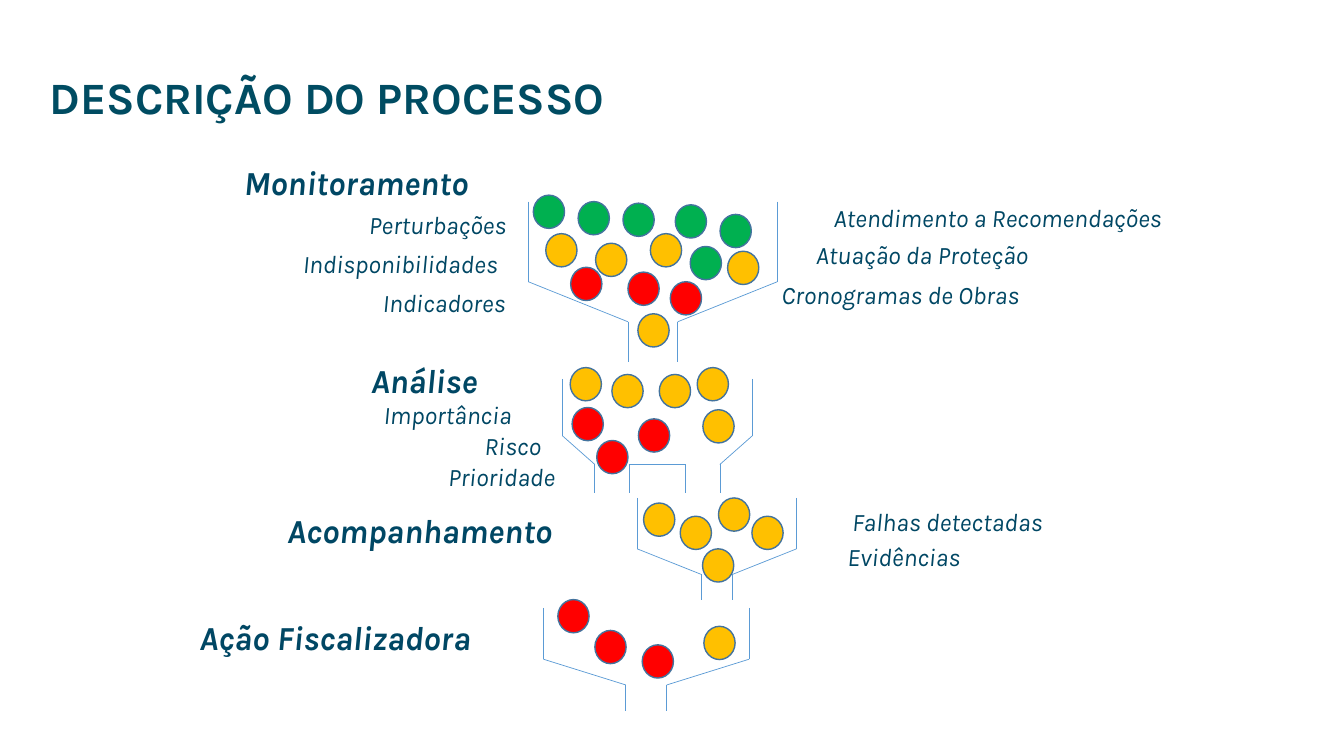
from pptx import Presentation
from pptx.dml.color import RGBColor
from pptx.enum.shapes import MSO_CONNECTOR, MSO_SHAPE
from pptx.enum.text import MSO_ANCHOR, PP_ALIGN
from pptx.oxml.ns import qn
from pptx.util import Inches, Pt
from lxml import etree

LINE, OVAL = MSO_CONNECTOR.STRAIGHT, MSO_SHAPE.OVAL
LEFT, CENTER, MIDDLE = PP_ALIGN.LEFT, PP_ALIGN.CENTER, MSO_ANCHOR.MIDDLE
FONT, TEAL, TITLE_TEAL = "Karla", "004764", "004C62"
FUNNEL_LINE, BALL_LINE = "5B9BD5", "43739E"
GREEN, AMBER, RED = "00B050", "FFC000", "FF0000"
BALL_W, BALL_H = 0.31, 0.33
# Heights of the funnel's shoulder and neck, as shares of its box
SHOULDER, NECK = 0.5, 0.75

# box: left, top, width, height in inches
# spouts: left and right edge of each spout, as shares of the box width
# balls: left and top as shares of the box
# heading, labels: text, then left and top from the box corner and width, in inches
STAGES = [
    {"box": (5.24, 2, 2.47, 1.59), "spouts": [(0.4, 0.6)],
     "balls": {
         GREEN: [(0.02, -0.04), (0.2, 0), (0.38, 0.01), (0.59, 0.02),
                 (0.77, 0.08), (0.65, 0.28)],
         AMBER: [(0.07, 0.2), (0.27, 0.26), (0.49, 0.2), (0.8, 0.31), (0.44, 0.7)],
         RED: [(0.17, 0.41), (0.4, 0.44), (0.57, 0.5)]},
     "heading": ("Monitoramento", -2.92, -0.44, 2.65),
     "labels": [("Perturbações", -1.78, 0.03, 1.76),
                ("Indisponibilidades", -2.49, 0.41, 2.44),
                ("Indicadores", -1.75, 0.8, 1.83),
                ("Atendimento a Recomendações", 2.44, -0.04, 4.43),
                ("Atuação da Proteção", 2.44, 0.33, 2.93),
                ("Cronogramas de Obras", 2.29, 0.72, 2.8)]},
    {"box": (5.58, 3.76, 1.88, 1.13), "spouts": [(0.17, 0.35), (0.65, 0.83)],
     "balls": {
         AMBER: [(0.04, -0.1), (0.26, -0.04), (0.51, -0.04), (0.71, -0.1), (0.74, 0.27)],
         RED: [(0.05, 0.25), (0.18, 0.54), (0.4, 0.35)]},
     "heading": ("Análise", -2, -0.24, 1.66),
     "labels": [("Importância", -2.09, 0.15, 1.9),
                ("Risco", -0.91, 0.46, 0.83),
                ("Prioridade", -1.3, 0.77, 1.39)]},
    {"box": (6.32, 4.94, 1.58, 1.01), "spouts": [(0.4, 0.6)],
     "balls": {AMBER: [(0.04, 0.05), (0.27, 0.18), (0.51, 0), (0.72, 0.18), (0.41, 0.5)]},
     "heading": ("Acompanhamento", -3.57, 0.07, 3.44),
     "labels": [("Falhas detectadas", 1.65, 0.03, 2.85),
                ("Evidências", 1.7, 0.38, 1.89)]},
    {"box": (5.39, 6.03, 2.04, 1.02), "spouts": [(0.4, 0.6)],
     "balls": {RED: [(0.07, -0.08), (0.25, 0.22), (0.48, 0.36)], AMBER: [(0.78, 0.18)]},
     "heading": ("Ação Fiscalizadora", -3.51, 0.04, 3.61),
     "labels": []},
]


def color(hex_string):
    return RGBColor.from_string(hex_string)


def add_run(p, text, size, hex_string, bold=False, italic=False):
    r = p.add_run()
    r.text = text
    r.font.name, r.font.size = FONT, Pt(size)
    r.font.bold, r.font.italic = bold, italic
    r.font.color.rgb = color(hex_string)


def add_title(s, text, x, y, w, h):
    sp = s.shapes.title
    sp.left, sp.top, sp.width, sp.height = map(Inches, (x, y, w, h))
    tf = sp.text_frame
    tf.word_wrap, tf.vertical_anchor = True, MIDDLE
    p = tf.paragraphs[0]
    p.alignment, p.line_spacing = LEFT, 0.9
    add_run(p, text, 32, TITLE_TEAL, bold=True)


def add_label(s, text, x, y, w, heading=False):
    sp = s.shapes.add_textbox(*map(Inches, (x, y, w, 0.5 if heading else 0.4)))
    tf = sp.text_frame
    tf.word_wrap = True
    p = tf.paragraphs[0]
    p.alignment = LEFT if heading else CENTER
    add_run(p, text, 24 if heading else 18, TEAL, bold=heading, italic=True)


def add_funnel(s, box, spouts):
    """Draw the outline: two outer walls, and the bridge between neighbouring spouts."""
    x, y, w, h = box
    first, last = spouts[0][0], spouts[-1][1]
    walls = [[(edge, 0), (edge, SHOULDER), (neck, NECK), (neck, 1)]
             for edge, neck in ((0, first), (1, last))]
    bridges = [[(a[1], 1), (a[1], NECK), (b[0], NECK), (b[0], 1)]
               for a, b in zip(spouts, spouts[1:])]
    for points in walls + bridges:
        for (x1, y1), (x2, y2) in zip(points, points[1:]):
            c = s.shapes.add_connector(LINE, Inches(x + x1 * w), Inches(y + y1 * h),
                                       Inches(x + x2 * w), Inches(y + y2 * h))
            c.line.color.rgb = color(FUNNEL_LINE)
            c.line.width = Pt(0.5)
            etree.SubElement(c._element.spPr, qn("a:effectLst"))


def add_balls(s, box, balls):
    x, y, w, h = box
    for fill, places in balls.items():
        for dx, dy in places:
            sp = s.shapes.add_shape(OVAL, Inches(x + dx * w), Inches(y + dy * h),
                                    Inches(BALL_W), Inches(BALL_H))
            sp.shadow.inherit = False
            sp.fill.solid()
            sp.fill.fore_color.rgb = color(fill)
            sp.line.color.rgb = color(BALL_LINE)
            sp.line.width = Pt(1)


def add_stage(s, box, spouts, balls, heading, labels):
    x, y = box[:2]
    add_funnel(s, box, spouts)
    add_balls(s, box, balls)
    for text, dx, dy, w in [heading] + labels:
        add_label(s, text, x + dx, y + dy, w, heading=text == heading[0])


def main():
    prs = Presentation()
    prs.slide_width, prs.slide_height = Inches(13.33), Inches(7.5)
    s = prs.slides.add_slide(prs.slide_layouts[5])
    add_title(s, "DESCRIÇÃO DO PROCESSO", 0.39, 0.61, 8.42, 0.77)
    for stage in STAGES:
        add_stage(s, **stage)
    prs.save("out.pptx")


if __name__ == "__main__":
    main()
